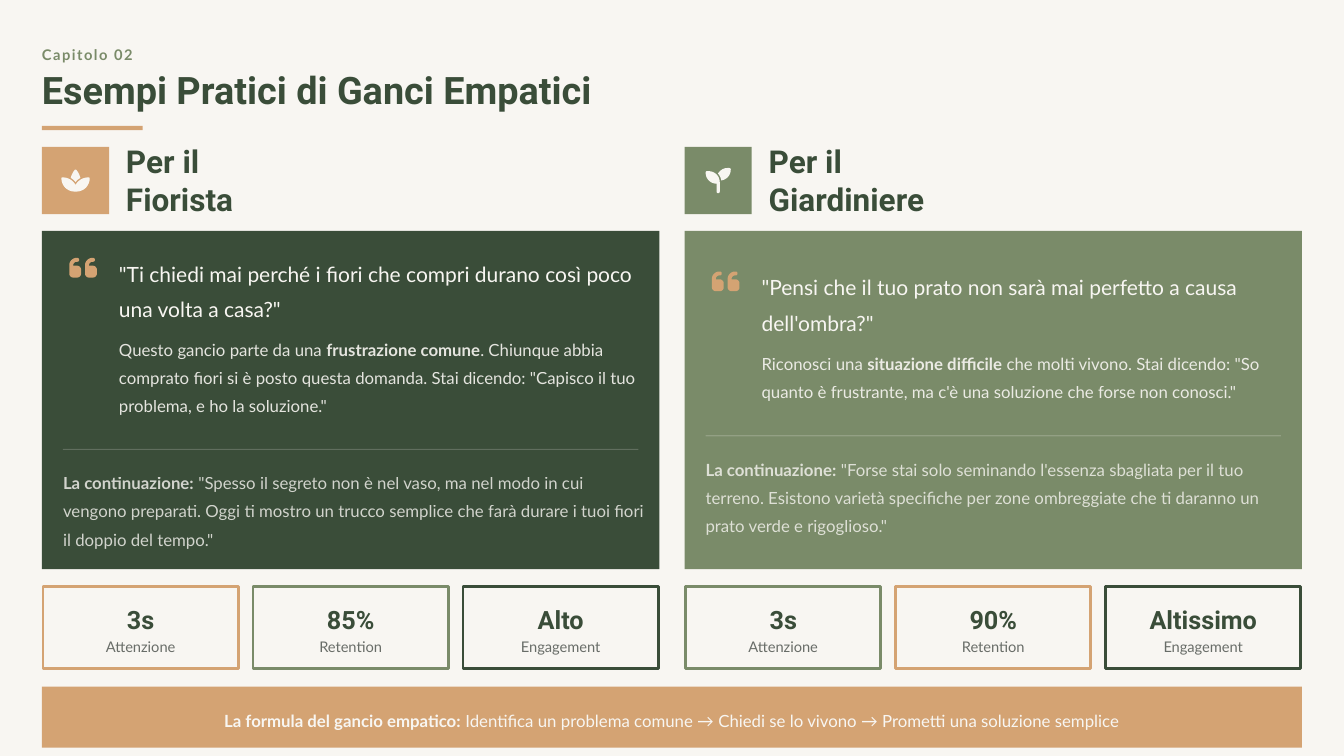
from dataclasses import dataclass

from lxml import etree
from pptx import Presentation
from pptx.dml.color import RGBColor
from pptx.enum.shapes import MSO_CONNECTOR, MSO_SHAPE
from pptx.enum.text import MSO_ANCHOR, PP_ALIGN
from pptx.oxml.ns import qn
from pptx.util import Pt

RECTANGLE = MSO_SHAPE.RECTANGLE
STRAIGHT = MSO_CONNECTOR.STRAIGHT
MIDDLE = MSO_ANCHOR.MIDDLE
LEFT, CENTER = PP_ALIGN.LEFT, PP_ALIGN.CENTER


@dataclass(frozen=True)
class Theme:
    cream: str = "F8F6F2"
    forest: str = "3A4D39"
    sage: str = "7A8B69"
    sand: str = "D4A373"
    ink: str = "2C332E"
    heading_font: str = "Roboto"
    body_font: str = "Lato"
    title: float = 27
    heading: float = 22.5
    stat: float = 18
    quote: float = 15
    body: float = 12
    small: float = 10.5


THEME = Theme()
MARGIN = 30
CONTENT_WIDTH = 900
COLUMN_WIDTH = 441
COLUMN_PITCH = 459
STAT_PITCH = 150
BODY_LINE = 19.5
STAT_LABELS = ("Attenzione", "Retention", "Engagement")

# Icon contours on a 512-unit em: a start point, then lines (2 numbers) and curves (6 numbers).
QUOTE_MARK = [
    (0, 216), (0, 150, 54, 96, 120, 96), (128, 96), (146, 96, 160, 110, 160, 128),
    (160, 146, 146, 160, 128, 160), (120, 160), (89, 160, 64, 185, 64, 216), (64, 224),
    (128, 224), (163, 224, 192, 253, 192, 288), (192, 352), (192, 387, 163, 416, 128, 416),
    (64, 416), (29, 416, 0, 387, 0, 352),
]
LOTUS = [
    [(183, 235), (217, 256, 246, 283, 269, 316), (276, 326, 282, 336, 288, 347),
     (294, 336, 300, 326, 307, 316), (330, 283, 359, 256, 393, 235),
     (438, 208, 490, 192, 546, 192), (556, 192), (567, 192, 576, 201, 576, 212),
     (576, 360, 456, 480, 308, 480), (268, 480), (120, 480, 0, 360, 0, 212),
     (0, 201, 9, 192, 20, 192), (30, 192), (86, 192, 138, 208, 183, 235)],
    [(302, 38), (317, 55, 363, 109, 386, 202), (348, 224, 314, 253, 288, 288),
     (262, 253, 228, 224, 190, 202), (213, 109, 259, 55, 274, 38),
     (278, 34, 283, 32, 288, 32), (293, 32, 298, 34, 302, 38)],
]
SEEDLING = [
    [(512, 32), (512, 146, 427, 240, 318, 254), (311, 201, 287, 152, 252, 115),
     (291, 46, 364, 0, 448, 0), (480, 0), (498, 0, 512, 14, 512, 32)],
    [(0, 96), (0, 78, 14, 64, 32, 64), (64, 64), (188, 64, 288, 164, 288, 288),
     (288, 480), (288, 498, 274, 512, 256, 512), (238, 512, 224, 498, 224, 480),
     (224, 320), (100, 320, 0, 220, 0, 96)],
]


def rgb(color):
    return RGBColor.from_string(color)


def set_opacity(element, percent):
    for color in element.iter(qn("a:srgbClr")):
        etree.SubElement(color, qn("a:alpha")).set("val", str(percent * 1000))


def add_text(slide, box, runs, size, color, font=THEME.body_font, spacing=1.0,
             align=LEFT, opacity=100, tracking=0):
    """Add one paragraph; runs are (text, bold) pairs and tracking is in points."""
    shape = slide.shapes.add_textbox(*map(Pt, box))
    frame = shape.text_frame
    frame.word_wrap = True
    frame.vertical_anchor = MIDDLE
    frame.margin_left = frame.margin_right = frame.margin_top = frame.margin_bottom = 0
    paragraph = frame.paragraphs[0]
    paragraph.alignment = align
    paragraph.line_spacing = spacing
    for text, bold in runs:
        run = paragraph.add_run()
        run.text = text
        run.font.name = font
        run.font.size = Pt(size)
        run.font.bold = bold
        run.font.color.rgb = rgb(color)
        if opacity < 100:
            set_opacity(run._r, opacity)
        if tracking:
            run._r.get_or_add_rPr().set("spc", str(round(tracking * 100)))


def add_rectangle(slide, box, fill=None, outline=None):
    shape = slide.shapes.add_shape(RECTANGLE, *map(Pt, box))
    shape.shadow.inherit = False
    if fill:
        shape.fill.solid()
        shape.fill.fore_color.rgb = rgb(fill)
    else:
        shape.fill.background()
    if outline:
        shape.line.color.rgb = rgb(outline)
        shape.line.width = Pt(2)
    else:
        shape.line.fill.background()


def add_divider(slide, left, top, width):
    line = slide.shapes.add_connector(STRAIGHT, Pt(left), Pt(top), Pt(left + width), Pt(top))
    line.line.color.rgb = rgb(THEME.cream)
    line.line.width = Pt(0.75)
    set_opacity(line._element, 20)
    etree.SubElement(line._element.spPr, qn("a:effectLst"))


def flatten(contour, steps=8):
    """Turn a contour of lines and cubic curves into a list of points."""
    points = [contour[0]]
    for segment in contour[1:]:
        if len(segment) == 2:
            points.append(segment)
            continue
        controls = [points[-1], segment[:2], segment[2:4], segment[4:]]
        for step in range(1, steps + 1):
            t = step / steps
            weights = ((1 - t) ** 3, 3 * t * (1 - t) ** 2, 3 * t * t * (1 - t), t ** 3)
            points.append(tuple(sum(w * c[axis] for w, c in zip(weights, controls))
                                for axis in (0, 1)))
    return points


def add_icon(slide, left, top, em, contours, color):
    outlines = [flatten(contour) for contour in contours]
    builder = slide.shapes.build_freeform(*outlines[0][0], scale=Pt(em) / 512)
    for index, points in enumerate(outlines):
        if index:
            builder.move_to(*points[0])
        builder.add_line_segments(points[1:], close=True)
    shape = builder.convert_to_shape(Pt(left), Pt(top))
    shape.shadow.inherit = False
    shape.fill.solid()
    shape.fill.fore_color.rgb = rgb(color)
    shape.line.fill.background()


def add_quote_marks(slide, left, top):
    second = [tuple(value + 256 * (i % 2 == 0) for i, value in enumerate(segment))
              for segment in QUOTE_MARK]
    add_icon(slide, left, top, 22.5, [QUOTE_MARK, second], THEME.sand)


def add_heading(slide, left, text, width, tile_color, icon, icon_width):
    add_rectangle(slide, (left, 105, 48, 48), tile_color)
    add_icon(slide, left + 24 - icon_width / 2, 120, 18, icon, THEME.cream)
    add_text(slide, (left + 60, 115, width, 27), [(text, True)],
             THEME.heading, THEME.forest, THEME.heading_font)


def add_panel(slide, left, fill, quote, body, body_lines, continuation):
    """Add a hook card whose content is centred vertically around its body length."""
    add_rectangle(slide, (left, 165, COLUMN_WIDTH, 241.5), fill)
    top = 180 + (3 - body_lines) * BODY_LINE / 2
    body_top = top + 57.75
    body_height = body_lines * BODY_LINE
    divider_top = body_top + body_height + 24.75
    add_quote_marks(slide, left + 19.5, top)
    add_text(slide, (left + 55, top, 379, 49), [(quote, False)],
             THEME.quote, THEME.cream, spacing=1.4)
    add_text(slide, (left + 55, body_top, 377, body_height), body,
             THEME.body, THEME.cream, spacing=1.4, opacity=90)
    add_divider(slide, left + 15, divider_top, 411)
    add_text(slide, (left + 15, divider_top + 12, 417, 3 * BODY_LINE),
             [("La continuazione:", True), (continuation, False)],
             THEME.body, THEME.cream, spacing=1.4, opacity=80)


def add_stats(slide, left, values, outlines):
    for index, (value, label, outline) in enumerate(zip(values, STAT_LABELS, outlines)):
        x = left + 0.75 + index * STAT_PITCH
        add_rectangle(slide, (x, 419.25, 139.5, 58.5), outline=outline)
        add_text(slide, (x + 5.25, 429, 129, 24), [(value, True)], THEME.stat,
                 THEME.forest, THEME.heading_font, 1.1, CENTER)
        add_text(slide, (x + 7.25, 453, 125, 15), [(label, False)], THEME.small,
                 THEME.ink, spacing=1.2, align=CENTER, opacity=70)


def main():
    presentation = Presentation()
    presentation.slide_width, presentation.slide_height = Pt(960), Pt(540)
    slide = presentation.slides.add_slide(presentation.slide_layouts[6])
    slide.background.fill.solid()
    slide.background.fill.fore_color.rgb = rgb(THEME.cream)

    add_text(slide, (MARGIN, 30, 905, 15), [("Capitolo 02", True)], THEME.small,
             THEME.sage, spacing=1.2, tracking=1.1)
    add_text(slide, (MARGIN, 51, 914, 30), [("Esempi Pratici di Ganci Empatici", True)],
             THEME.title, THEME.forest, THEME.heading_font, 0.9)
    add_rectangle(slide, (MARGIN, 90, 72, 3), THEME.sand)

    florist, gardener = MARGIN, MARGIN + COLUMN_PITCH
    add_heading(slide, florist, "Per il Fiorista", 132, THEME.sand, LOTUS, 20.25)
    add_panel(slide, florist, THEME.forest,
              '"Ti chiedi mai perché i fiori che compri durano così poco una volta a casa?"',
              [("Questo gancio parte da una ", False), ("frustrazione comune", True),
               (". Chiunque abbia comprato fiori si è posto questa domanda. Stai dicendo: "
                '"Capisco il tuo problema, e ho la soluzione."', False)], 3,
              ' "Spesso il segreto non è nel vaso, ma nel modo in cui vengono preparati. Oggi ti '
              'mostro un trucco semplice che farà durare i tuoi fiori il doppio del tempo."')
    add_stats(slide, florist, ("3s", "85%", "Alto"), (THEME.sand, THEME.sage, THEME.forest))

    add_heading(slide, gardener, "Per il Giardiniere", 162, THEME.sage, SEEDLING, 18)
    add_panel(slide, gardener, THEME.sage,
              '"Pensi che il tuo prato non sarà mai perfetto a causa dell\'ombra?"',
              [("Riconosci una ", False), ("situazione difficile", True),
               (' che molti vivono. Stai dicendo: "So quanto è frustrante, ma c\'è una '
                'soluzione che forse non conosci."', False)], 2,
              ' "Forse stai solo seminando l\'essenza sbagliata per il tuo terreno. Esistono '
              'varietà specifiche per zone ombreggiate che ti daranno un prato verde e rigoglioso."')
    add_stats(slide, gardener, ("3s", "90%", "Altissimo"),
              (THEME.sage, THEME.sand, THEME.forest))

    add_rectangle(slide, (MARGIN, 490.5, CONTENT_WIDTH, 43.5), THEME.sand)
    add_text(slide, (MARGIN + 9, 502.5, CONTENT_WIDTH - 18, 19.5),
             [("La formula del gancio empatico:", True),
              (" Identifica un problema comune → Chiedi se lo vivono → Prometti una soluzione "
               "semplice", False)],
             THEME.body, THEME.cream, spacing=1.4, align=CENTER)
    presentation.save("out.pptx")


if __name__ == "__main__":
    main()
